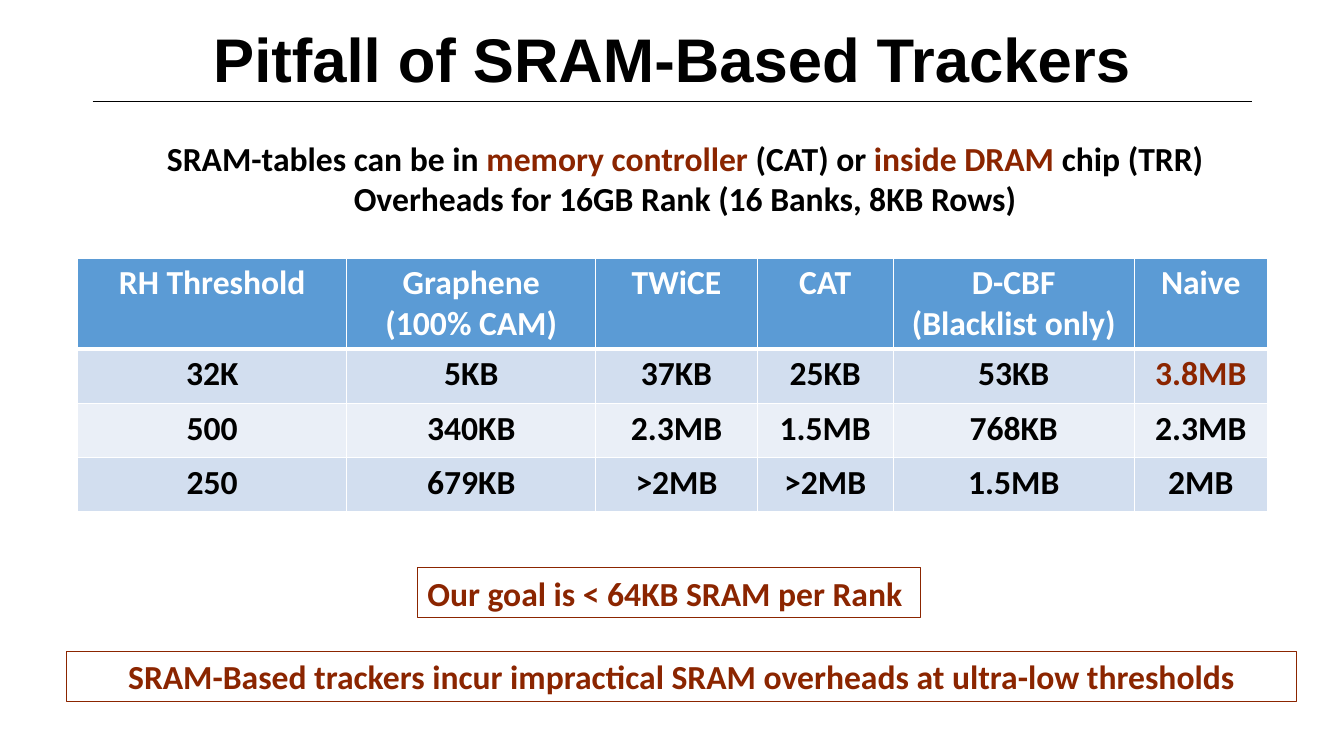
"""Build the slide on the storage overheads of SRAM-based trackers."""
from typing import NamedTuple

from lxml.etree import SubElement
from pptx import Presentation
from pptx.dml.color import RGBColor
from pptx.enum.shapes import MSO_CONNECTOR as Connector, MSO_SHAPE as Preset
from pptx.enum.text import MSO_ANCHOR as Anchor, PP_ALIGN as Align
from pptx.oxml import parse_xml
from pptx.oxml.ns import nsdecls, qn
from pptx.slide import Slide
from pptx.table import _Cell as Cell
from pptx.text.text import TextFrame
from pptx.util import Inches, Pt

BLACK, WHITE, RUST = "000000", "FFFFFF", "8B2500"
HEADER_BLUE, BAND_DARK, BAND_LIGHT = "5B9BD5", "D2DEEF", "EAEFF7"


class Span(NamedTuple):
    text: str
    color: str = BLACK


class Box(NamedTuple):
    left: float
    top: float
    width: float
    height: float


class Callout(NamedTuple):
    box: Box
    text: str
    align: Align


INTRO = [
    [Span("SRAM-tables can be in "), Span("memory controller ", RUST), Span("(CAT) or "),
     Span("inside DRAM ", RUST), Span("chip (TRR)")],
    [Span("Overheads for 16GB Rank (16 Banks, 8KB Rows)")],
]
OVERHEADS = [
    ["RH Threshold", "Graphene\n(100% CAM)", "TWiCE", "CAT", "D-CBF\n(Blacklist only)", "Naive"],
    ["32K", "5KB", "37KB", "25KB", "53KB", "3.8MB"],
    ["500", "340KB", "2.3MB", "1.5MB", "768KB", "2.3MB"],
    ["250", "679KB", ">2MB", ">2MB", "1.5MB", "2MB"],
]
COLUMN_WIDTHS = [2.67, 2.47, 1.6, 1.35, 2.39, 1.32]
ROW_HEIGHTS = [0.9, 0.54, 0.54, 0.54]
HIGHLIGHT = "3.8MB"
CALLOUTS = [
    Callout(Box(0.66, 6.46, 12.2, 0.5),
            "SRAM-Based trackers incur impractical SRAM overheads at ultra-low thresholds",
            Align.CENTER),
    Callout(Box(4.14, 5.63, 4.99, 0.5), "Our goal is < 64KB SRAM per Rank", Align.LEFT),
]


def rgb(color: str) -> RGBColor:
    return RGBColor.from_string(color)


def write(frame: TextFrame, lines: list[list[Span]], align: Align = Align.CENTER,
          size: float = 24, font: str = "Calibri") -> None:
    frame.word_wrap = True
    for index, spans in enumerate(lines):
        paragraph = frame.add_paragraph() if index else frame.paragraphs[0]
        paragraph.alignment = align
        for span in spans:
            run = paragraph.add_run()
            run.text = span.text
            run.font.name, run.font.size, run.font.bold = font, Pt(size), True
            run.font.color.rgb = rgb(span.color)


def add_text(slide: Slide, box: Box) -> TextFrame:
    return slide.shapes.add_textbox(*map(Inches, box)).text_frame


def add_title(slide: Slide) -> None:
    title = add_text(slide, Box(0.7, 0.23, 11.94, 0.78))
    title.vertical_anchor = Anchor.MIDDLE
    write(title, [[Span("Pitfall of SRAM-Based Trackers")]], size=44, font="Arial")
    title.paragraphs[0].line_spacing = 0.9
    rule = slide.shapes.add_connector(
        Connector.STRAIGHT, *map(Inches, (0.92, 1.01, 12.42, 1.01)))
    rule.line.color.rgb, rule.line.width = rgb(BLACK), Pt(0.5)
    SubElement(rule._element.spPr, qn("a:effectLst"))


def add_borders(cell: Cell, top: float, bottom: float) -> None:
    properties = cell._tc.get_or_add_tcPr()
    for index, (side, width) in enumerate(zip("LRTB", (1, 1, top, bottom))):
        properties.insert(index, parse_xml(
            f'<a:ln{side} {nsdecls("a")} w="{Pt(width)}"><a:solidFill>'
            f'<a:srgbClr val="{WHITE}"/></a:solidFill></a:ln{side}>'))


def add_overheads(slide: Slide) -> None:
    box = Box(0.77, 2.56, sum(COLUMN_WIDTHS), sum(ROW_HEIGHTS))
    table = slide.shapes.add_table(
        len(ROW_HEIGHTS), len(COLUMN_WIDTHS), *map(Inches, box)).table
    for column, width in zip(table.columns, COLUMN_WIDTHS):
        column.width = Inches(width)
    for row, height in zip(table.rows, ROW_HEIGHTS):
        row.height = Inches(height)
    for row_index, values in enumerate(OVERHEADS):
        band = BAND_DARK if row_index % 2 else BAND_LIGHT
        for column_index, value in enumerate(values):
            cell = table.cell(row_index, column_index)
            cell.fill.solid()
            cell.fill.fore_color.rgb = rgb(band if row_index else HEADER_BLUE)
            add_borders(cell, 3 if row_index == 1 else 1, 1 if row_index else 3)
            color = WHITE if row_index == 0 else RUST if value == HIGHLIGHT else BLACK
            write(cell.text_frame, [[Span(line, color)] for line in value.split("\n")])


def add_callout(slide: Slide, callout: Callout) -> None:
    frame = slide.shapes.add_shape(Preset.RECTANGLE, *map(Inches, callout.box))
    frame.shadow.inherit = False
    frame.fill.background()
    frame.line.color.rgb, frame.line.width = rgb(RUST), Pt(0.75)
    frame.text_frame.vertical_anchor = Anchor.TOP
    write(frame.text_frame, [[Span(callout.text, RUST)]], callout.align)


def main() -> None:
    deck = Presentation()
    deck.slide_width, deck.slide_height = Inches(13.33), Inches(7.5)
    slide = deck.slides.add_slide(deck.slide_layouts[6])
    add_title(slide)
    add_overheads(slide)
    write(add_text(slide, Box(1.27, 1.32, 11.05, 0.91)), INTRO)
    for callout in CALLOUTS:
        add_callout(slide, callout)
    deck.save("out.pptx")


if __name__ == "__main__":
    main()
